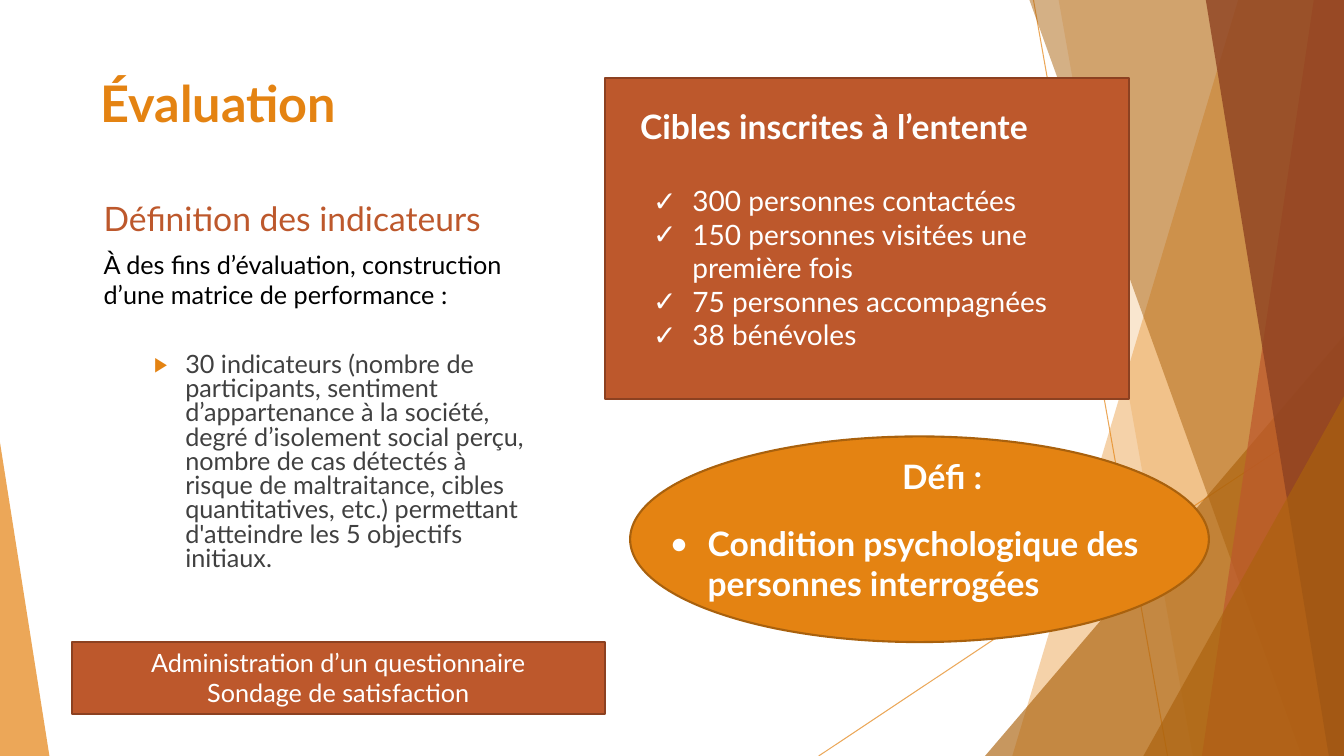
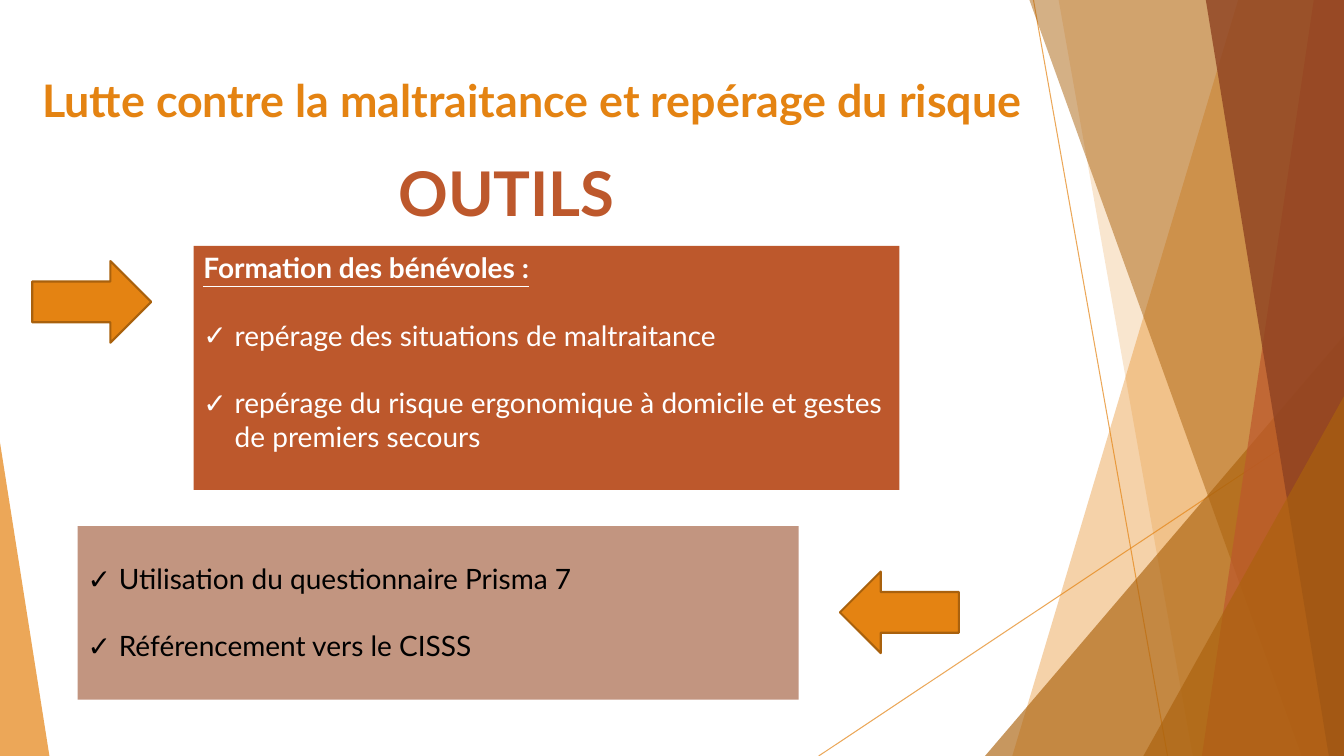
from dataclasses import dataclass

import lxml.etree
import pptx
import pptx.dml.color
import pptx.enum.shapes
import pptx.enum.text
import pptx.oxml.ns
import pptx.util

SCALE = 9144
WIDE, HIGH = 1333, 750
FONT = "Lato"
ORANGE, RUST, BROWN, MAROON = "E48312", "BD582C", "AB620D", "8E4221"
ROSE, WHITE, BLACK, GREY = "C29580", "FFFFFF", "000000", "404040"
RUST_EDGE, GOLD_EDGE = "8C4121", "A9610D"
KIND = pptx.enum.shapes.MSO_SHAPE
ALIGN = pptx.enum.text.PP_ALIGN


@dataclass
class Box:
    left: int
    top: int
    width: int
    height: int


@dataclass
class Para:
    text: str
    size: int
    color: str
    bold: bool = False
    under: bool = False
    center: bool = False
    mark: str = ""
    tint: str = ""
    ratio: int = 100
    left: int = 0
    hang: int = 0
    gap: int = 0
    lead: float = 1.0


@dataclass
class Line:
    start: tuple[int, int]
    end: tuple[int, int]


@dataclass
class Band:
    top: int
    base: int
    color: str
    alpha: int


@dataclass
class Wedge:
    box: Box
    peak: int
    color: str
    alpha: int


LINES = [Line((1025, 0), (1158, HIGH)), Line((WIDE, 403), (812, HIGH))]
DECOR = [
    Band(1228, 1004, ORANGE, 36),
    Band(1050, 1183, ORANGE, 20),
    Wedge(Box(977, 333, 356, 417), 1, BROWN, 66),
    Band(1021, 1291, BROWN, 50),
    Band(1303, 1192, RUST, 70),
    Band(1196, 1318, MAROON, 80),
    Wedge(Box(1134, 393, 199, 357), 1, BROWN, 66),
    Wedge(Box(0, 439, 49, 311), 0, ORANGE, 70),
]


def px(count: int) -> pptx.util.Emu:
    return pptx.util.Emu(count * SCALE)


def hue(code: str) -> pptx.dml.color.RGBColor:
    return pptx.dml.color.RGBColor.from_string(code)


def place(box: Box) -> list[pptx.util.Emu]:
    return [px(n) for n in (box.left, box.top, box.width, box.height)]


def node(root, tag: str, **attrs: str):
    return lxml.etree.SubElement(root, pptx.oxml.ns.qn(tag), attrs)


def fade(shape, alpha: int) -> None:
    for color in shape.element.iter(pptx.oxml.ns.qn("a:srgbClr")):
        node(color, "a:alpha", val=str(alpha * 1000))


def paint(shape, color: str, edge: str = "") -> None:
    shape.shadow.inherit = False
    shape.fill.solid()
    shape.fill.fore_color.rgb = hue(color)
    if edge:
        shape.line.color.rgb = hue(edge)
        shape.line.width = pptx.util.Pt(1.5)
    else:
        shape.line.fill.background()


def draw(slide, kind, box: Box, color: str, edge: str = ""):
    shape = slide.shapes.add_shape(kind, *place(box))
    paint(shape, color, edge)
    return shape


def style(para, item: Para) -> None:
    para.text = item.text
    para.alignment = ALIGN.CENTER if item.center else ALIGN.LEFT
    para.space_before = pptx.util.Pt(item.gap)
    para.line_spacing = item.lead
    for run in para.runs:
        run.font.name = FONT
        run.font.size = pptx.util.Pt(item.size)
        run.font.color.rgb = hue(item.color)
        run.font.bold = item.bold
        run.font.underline = item.under
    if item.mark:
        props = para._p.get_or_add_pPr()
        props.set("marL", str(px(item.left)))
        props.set("indent", str(px(-item.hang)))
        tint = node(props, "a:buClr")
        node(tint, "a:srgbClr", val=item.tint or item.color)
        node(props, "a:buSzPct", val=str(item.ratio * 1000))
        node(props, "a:buFont", typeface=FONT)
        node(props, "a:buChar", char=item.mark)


def write(shape, items: list[Para], inset: int = 5) -> None:
    frame = shape.text_frame
    frame.word_wrap = True
    frame.vertical_anchor = pptx.enum.text.MSO_ANCHOR.TOP
    frame.margin_left = frame.margin_right = px(10)
    frame.margin_top, frame.margin_bottom = px(inset), px(5)
    for spot, item in enumerate(items):
        style(frame.add_paragraph() if spot else frame.paragraphs[0], item)


def label(slide, box: Box, *items: Para) -> None:
    write(slide.shapes.add_textbox(*place(box)), list(items))


def title(slide, text: str, box: Box, size: int) -> None:
    label(slide, box, Para(text, size, ORANGE, bold=True))


def check(text: str, color: str, dent: int, gap: int = 0) -> Para:
    return Para(text, 20, color, mark="✓", left=dent, hang=dent, gap=gap)


def stroke(slide, line: Line):
    link = slide.shapes.add_connector(
        pptx.enum.shapes.MSO_CONNECTOR.STRAIGHT,
        *(px(n) for n in line.start + line.end),
    )
    link.line.color.rgb = hue(ORANGE)
    link.line.width = pptx.util.Pt(0.75)
    fade(link, 70)
    node(link.element.spPr, "a:effectLst")
    return link


def panel(slide, item: Band | Wedge):
    if isinstance(item, Band):
        path = slide.shapes.build_freeform(item.top, 0, SCALE)
        path.add_line_segments([(WIDE, 0), (WIDE, HIGH), (item.base, HIGH)])
        shape = path.convert_to_shape()
        paint(shape, item.color)
    else:
        shape = draw(slide, KIND.ISOSCELES_TRIANGLE, item.box, item.color)
        shape.adjustments[0] = item.peak
    fade(shape, item.alpha)
    return shape


def adorn(layout, slide) -> None:
    for holder in list(layout.placeholders):
        holder.element.getparent().remove(holder.element)
    shapes = [stroke(slide, line) for line in LINES]
    shapes += [panel(slide, item) for item in DECOR]
    for shape in shapes:
        layout.shapes.element.append(shape.element)


def review(slide) -> None:
    draw(slide, KIND.RECTANGLE, Box(600, 77, 520, 319), RUST, RUST_EDGE)
    title(slide, "Évaluation", Box(90, 67, 940, 116), 36)
    label(
        slide,
        Box(93, 242, 447, 479),
        Para("À des fins d’évaluation, construction d’une matrice de performance :", 18, BLACK),
        Para(
            "30 indicateurs (nombre de participants, sentiment d’appartenance à la "
            "société, degré d’isolement social perçu, nombre de cas détectés à risque "
            "de maltraitance, cibles quantitatives, etc.) permettant d'atteindre les 5 "
            "objectifs initiaux.",
            18, GREY, mark="▶", tint=ORANGE, ratio=80,
            left=81, hang=31, gap=32, lead=0.8,
        ),
    )
    label(slide, Box(93, 191, 637, 50), Para("Définition des indicateurs", 24, RUST))
    label(
        slide,
        Box(625, 100, 447, 50),
        Para("Cibles inscrites à l’entente", 24, WHITE, bold=True),
    )
    goals = [
        "300 personnes contactées",
        "150 personnes visitées une première fois",
        "75 personnes accompagnées",
        "38 bénévoles",
    ]
    label(slide, Box(638, 177, 447, 219), *(check(goal, WHITE, 39) for goal in goals))
    survey = draw(slide, KIND.RECTANGLE, Box(71, 637, 529, 71), RUST, RUST_EDGE)
    steps = ["Administration d’un questionnaire", "Sondage de satisfaction"]
    write(survey, [Para(step, 18, WHITE, center=True) for step in steps])
    draw(slide, KIND.OVAL, Box(625, 433, 574, 204), ORANGE, GOLD_EDGE)
    label(
        slide,
        Box(654, 447, 561, 158),
        Para("Défi :", 24, WHITE, bold=True, center=True),
        Para(
            "Condition psychologique des personnes interrogées",
            24, WHITE, bold=True, mark="•", left=38, hang=38, gap=19,
        ),
    )


def tools(slide) -> None:
    heading = "Lutte contre la maltraitance et repérage du risque"
    title(slide, heading, Box(32, 67, 1200, 93), 32)
    course = draw(slide, KIND.RECTANGLE, Box(192, 244, 700, 242), RUST)
    topics = [
        "repérage des situations de maltraitance",
        "repérage du risque ergonomique à domicile et gestes de premiers secours",
    ]
    write(
        course,
        [Para("Formation des bénévoles :", 20, WHITE, bold=True, under=True)]
        + [check(topic, WHITE, 31, 24) for topic in topics],
    )
    label(slide, Box(163, 149, 679, 84), Para("OUTILS", 44, RUST, bold=True, center=True))
    means = draw(slide, KIND.RECTANGLE, Box(77, 522, 715, 172), ROSE)
    write(
        means,
        [
            check("Utilisation du questionnaire Prisma 7", BLACK, 31),
            check("Référencement vers le CISSS", BLACK, 31, 24),
        ],
        inset=35,
    )
    for left, top, turn in ((32, 259, 0), (833, 567, 180)):
        box = Box(left, top, 118, 81)
        arrow = draw(slide, KIND.RIGHT_ARROW, box, ORANGE, GOLD_EDGE)
        arrow.rotation = turn


def main() -> None:
    deck = pptx.Presentation()
    deck.slide_width, deck.slide_height = px(WIDE), px(HIGH)
    blank = deck.slide_layouts[6]
    first = deck.slides.add_slide(blank)
    adorn(blank, first)
    review(first)
    tools(deck.slides.add_slide(blank))
    deck.save("out.pptx")


if __name__ == "__main__":
    main()
